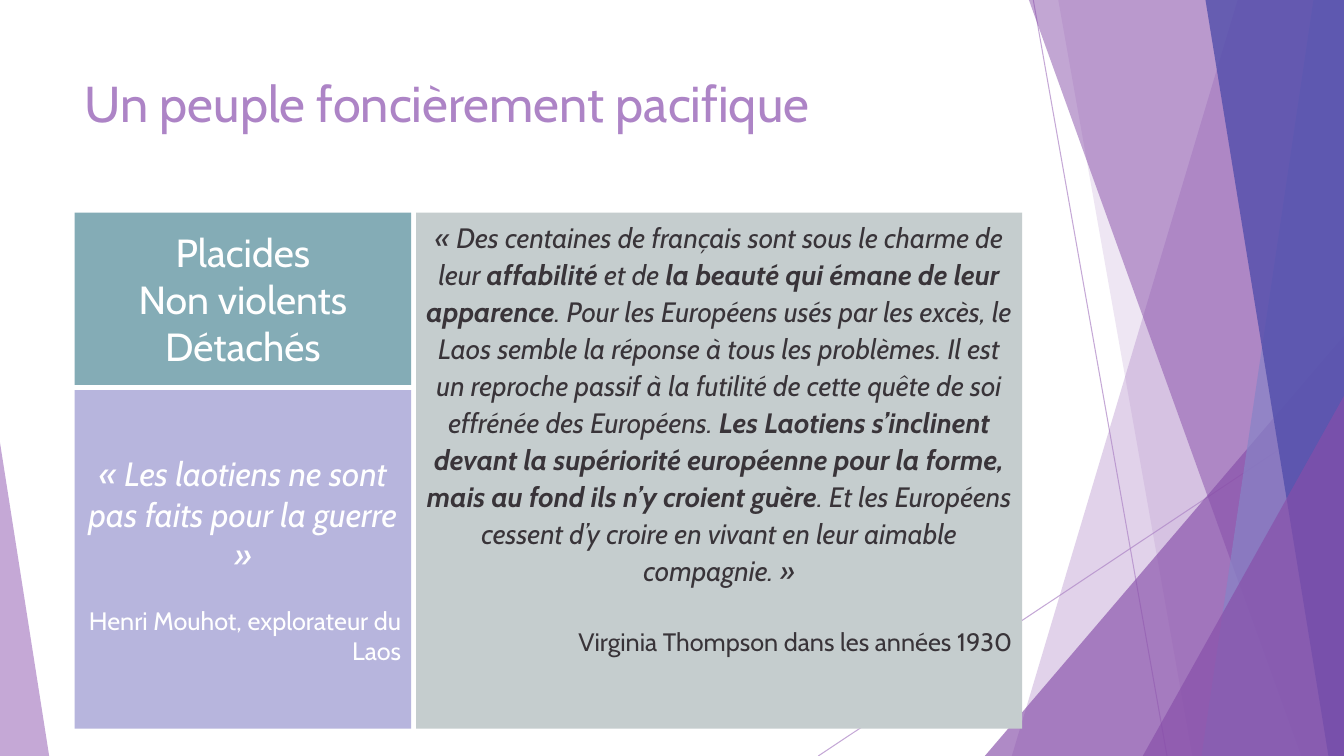
from dataclasses import dataclass

from lxml.etree import SubElement
from pptx import Presentation
from pptx.dml.color import RGBColor
from pptx.enum.shapes import MSO_CONNECTOR as Connector, MSO_SHAPE as Shape
from pptx.enum.text import MSO_ANCHOR as Anchor, MSO_AUTO_SIZE as AutoSize, PP_ALIGN as Align
from pptx.oxml.ns import qn
from pptx.util import Cm, Pt

WIDTH, HEIGHT = 33.87, 19.05


@dataclass(frozen=True)
class Theme:
    font: str = "Cabin"
    lilac: str = "AD84C6"
    purple: str = "874EA9"
    periwinkle: str = "8784C7"
    indigo: str = "524EAB"
    teal: str = "84ACB6"
    lavender: str = "B7B5DD"
    grey: str = "C5CDCE"
    ink: str = "393439"
    white: str = "FFFFFF"
    title: int = 36
    traits: int = 28
    short_quote: int = 24
    long_quote: int = 20
    author: int = 18


class SlideBuilder:
    def __init__(self, slide, theme):
        self.slide, self.shapes, self.theme = slide, slide.shapes, theme

    def _paint(self, color_format, color, opacity=100):
        color_format.rgb = RGBColor.from_string(color)

    def _fill(self, shape, color, opacity=100):
        shape.shadow.inherit = False
        shape.fill.solid()
        shape.fill.fore_color.rgb = RGBColor.from_string(color)
        shape.line.fill.background()
        self._fade(shape, opacity)

    def _fade(self, shape, opacity):
        """Set the opacity, in percent, of the shape's only solid colour."""
        if opacity < 100:
            color = next(shape.element.spPr.iter(qn("a:srgbClr")))
            SubElement(color, qn("a:alpha")).set("val", str(opacity * 1000))

    def title(self, text, left, top, width, height):
        title = self.shapes.title
        title.left, title.top, title.width, title.height = map(Cm, (left, top, width, height))
        frame = title.text_frame
        frame.auto_size, frame.vertical_anchor = AutoSize.NONE, Anchor.TOP
        frame.text = text
        self._style(frame.paragraphs[0], self.theme.title, self.theme.lilac, Align.LEFT)
        title.element.getparent().append(title.element)  # in front of the decoration

    def ray(self, start, end):
        ray = self.shapes.add_connector(Connector.STRAIGHT, *map(Cm, start + end))
        ray.line.width = Pt(0.75)
        ray.line.color.rgb = RGBColor.from_string(self.theme.lilac)
        self._fade(ray, 70)
        SubElement(ray.element.spPr, qn("a:effectLst"))

    def facet(self, corners, color, opacity):
        points = [(Cm(x), Cm(y)) for x, y in corners]
        outline = self.shapes.build_freeform(*points[0])
        outline.add_line_segments(points[1:])
        self._fill(outline.convert_to_shape(), color, opacity)

    def card(self, left, top, width, height, color, anchor=Anchor.MIDDLE):
        """Draw a filled rectangle and return its text frame."""
        card = self.shapes.add_shape(Shape.RECTANGLE, *map(Cm, (left, top, width, height)))
        self._fill(card, color)
        card.text_frame.word_wrap = True
        card.text_frame.vertical_anchor = anchor
        return card.text_frame

    def _style(self, paragraph, size, color, align, italic=False):
        paragraph.alignment = align
        for run in paragraph.runs:
            font = run.font
            font.name, font.size, font.italic = self.theme.font, Pt(size), italic
            font.color.rgb = RGBColor.from_string(color)

    def lines(self, frame, text, size, color):
        frame.text = text
        for paragraph in frame.paragraphs:
            self._style(paragraph, size, color, Align.CENTER)

    def quote(self, frame, text, author, size, color, gap, spacing=1.0):
        """Write a quotation, bold between asterisks, and its author."""
        saying, credit = frame.paragraphs[0], frame.add_paragraph()
        for index, part in enumerate(text.split("*")):
            run = saying.add_run()
            run.text = part
            run.font.bold = index % 2 == 1
        credit.text = author
        credit.space_before = Pt(gap)
        saying.line_spacing = credit.line_spacing = spacing
        self._style(saying, size, color, Align.CENTER, italic=True)
        self._style(credit, self.theme.author, color, Align.RIGHT)


def band(top_x, bottom_x):
    """Corners of a full-height facet reaching the right edge."""
    return [(top_x, 0), (WIDTH, 0), (WIDTH, HEIGHT), (bottom_x, HEIGHT)]


def wedge(bottom_x, edge_y, edge_x=WIDTH):
    """Corners of a triangle standing on the bottom edge."""
    return [(bottom_x, HEIGHT), (edge_x, edge_y), (edge_x, HEIGHT)]


def decorate(builder):
    theme = builder.theme
    builder.ray((26.04, 0), (29.41, HEIGHT))
    builder.ray((WIDTH, 10.24), (20.62, HEIGHT))
    for corners, color, opacity in [
        (band(31.19, 25.5), theme.lilac, 36),
        (band(26.67, 30.05), theme.lilac, 20),
        (wedge(24.82, 8.46), theme.purple, 66),
        (band(25.93, 32.79), theme.purple, 50),
        (band(33.1, 30.28), theme.periwinkle, 70),
        (band(30.38, 33.48), theme.indigo, 80),
        (wedge(28.8, 9.98), theme.purple, 66),
        (wedge(1.24, 11.15, edge_x=0), theme.lilac, 70),
    ]:
        builder.facet(corners, color, opacity)


def main():
    deck = Presentation()
    deck.slide_width, deck.slide_height = Cm(WIDTH), Cm(HEIGHT)
    theme = Theme()
    builder = SlideBuilder(deck.slides.add_slide(deck.slide_layouts[5]), theme)
    decorate(builder)

    left, top, gap = 1.88, 5.36, 0.13
    side_width, main_width = 8.48, 15.27
    traits_height, mouhot_height = 4.34, 8.53
    full_width = side_width + gap + main_width
    full_height = traits_height + gap + mouhot_height

    builder.title("Un peuple foncièrement pacifique", left, 1.7, full_width, top - 1.7)

    traits = builder.card(left, top, side_width, traits_height, theme.teal)
    builder.lines(traits, "Placides\nNon violents\nDétachés", theme.traits, theme.white)

    mouhot = builder.card(left, top + traits_height + gap, side_width, mouhot_height,
                          theme.lavender)
    builder.quote(mouhot, "« Les laotiens ne sont pas faits pour la guerre »",
                  "Henri Mouhot, explorateur du Laos", theme.short_quote, theme.white, gap=22)

    thompson = builder.card(left + side_width + gap, top, main_width, full_height,
                            theme.grey, Anchor.TOP)
    builder.quote(
        thompson,
        "« Des centaines de français sont sous le charme de leur *affabilité* et de "
        "*la beauté qui émane de leur apparence*. Pour les Européens usés par les excès, "
        "le Laos semble la réponse à tous les problèmes. Il est un reproche passif à la "
        "futilité de cette quête de soi effrénée des Européens. *Les Laotiens s’inclinent "
        "devant la supériorité européenne pour la forme, mais au fond ils n’y croient "
        "guère*. Et les Européens cessent d’y croire en vivant en leur aimable compagnie. »",
        "Virginia Thompson dans les années 1930",
        theme.long_quote, theme.ink, gap=26, spacing=1.1)

    deck.save("out.pptx")


if __name__ == "__main__":
    main()
